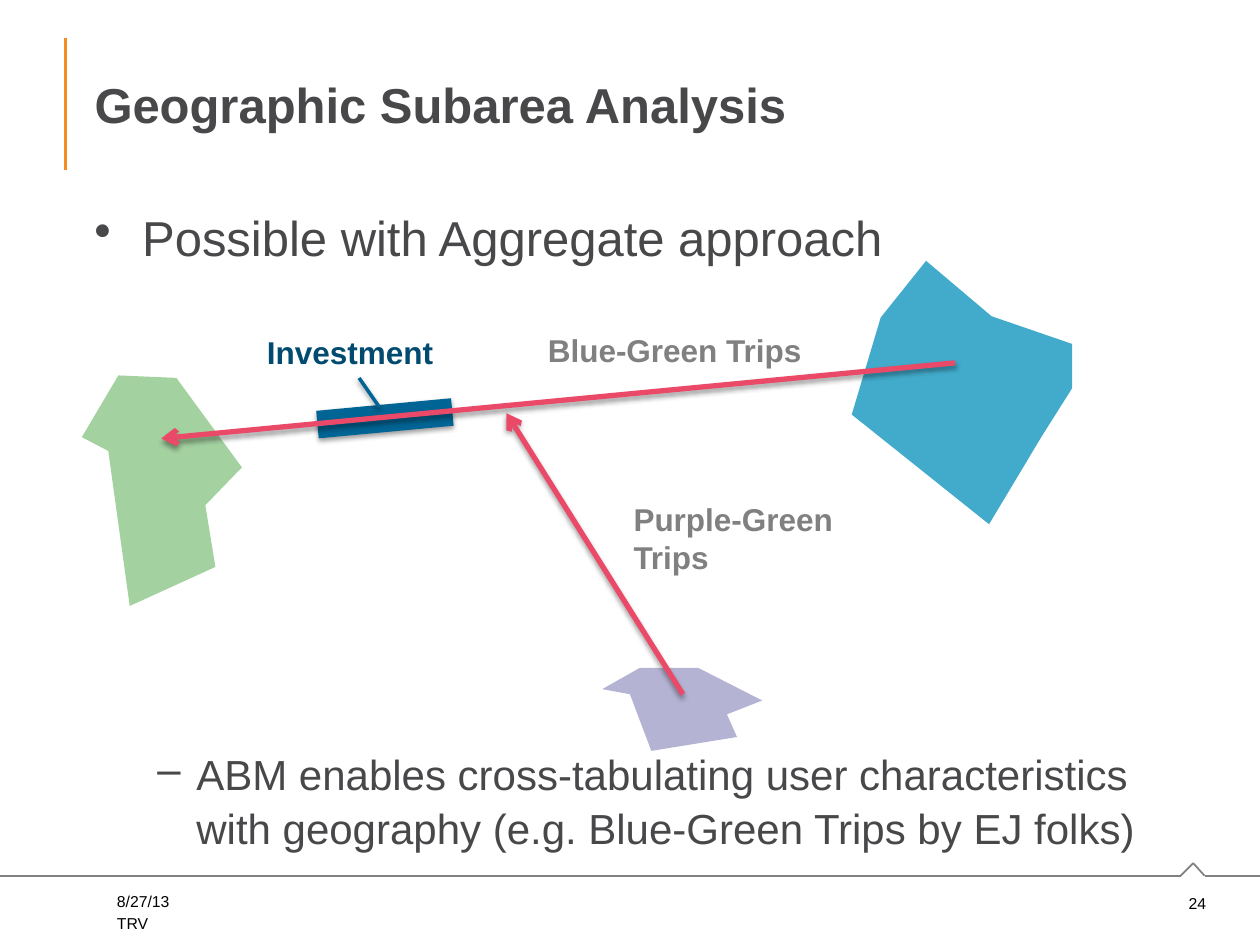
from itertools import pairwise

from lxml import etree
from pptx import Presentation
from pptx.dml.color import RGBColor
from pptx.enum import shapes, text
from pptx.oxml import ns
from pptx.util import Inches, Pt

COLORS = {
    "text": "48484A", "black": "000000", "gray": "808080", "accent": "F68B1F",
    "navy": "004B6F", "road": "006494", "trip": "EA4A67",
    "blue": "42ABCB", "green": "A3D1A0", "purple": "B5B3D3",
}
FONT = "Arial"


def color(name):
    return RGBColor.from_string(COLORS[name])


def add_element(parent, tag, **attributes):
    return etree.SubElement(parent, ns.qn(tag), attributes)


class SlideBuilder:
    def __init__(self, deck):
        self.page = deck.slides.add_slide(deck.slide_layouts[5])
        self.shapes = self.page.shapes

    def style(self, para, size, tint, bold=False):
        para.font.name = FONT
        para.font.size = Pt(size)
        para.font.bold = bold
        para.font.color.rgb = color(tint)

    def title(self, words, left, top, width, height):
        box = self.shapes.title
        box.left, box.top, box.width, box.height = map(Inches, (left, top, width, height))
        box.text_frame.text = words
        box.text_frame.vertical_anchor = text.MSO_ANCHOR.MIDDLE
        para = box.text_frame.paragraphs[0]
        para.alignment = text.PP_ALIGN.LEFT
        self.style(para, 28, "text", bold=True)

    def text_box(self, left, top, width, height):
        box = self.shapes.add_textbox(*map(Inches, (left, top, width, height)))
        box.text_frame.word_wrap = True
        return box.text_frame

    def label(self, words, left, top, width, height, size=18, tint="gray",
              bold=True, align=text.PP_ALIGN.LEFT):
        frame = self.text_box(left, top, width, height)
        frame.text = words
        frame.paragraphs[0].alignment = align
        self.style(frame.paragraphs[0], size, tint, bold)
        return frame

    def bullet(self, para, words, mark, size, margin, hanging):
        para.text = words
        para.line_spacing = 1.06
        properties = para._p.get_or_add_pPr()
        properties.set("marL", str(Inches(margin)))
        properties.set("indent", str(-Inches(hanging)))
        add_element(properties, "a:buChar", char=mark)
        self.style(para, size, "text")

    def line(self, start, end, tint, width, head=None, tail=None, shadow=False):
        line = self.shapes.add_connector(
            shapes.MSO_CONNECTOR.STRAIGHT, *map(Inches, (*start, *end)))
        line.line.color.rgb = color(tint)
        line.line.width = Pt(width)
        outline = line.line._get_or_add_ln()
        for tag, arrow in (("a:headEnd", head), ("a:tailEnd", tail)):
            if arrow:
                add_element(outline, tag, type=arrow)
        effects = add_element(line._element.spPr, "a:effectLst")
        if shadow:
            outer = add_element(effects, "a:outerShdw", blurRad=str(Pt(3.1)),
                                dist=str(Pt(1.6)), dir="5400000", rotWithShape="0")
            shade = add_element(outer, "a:srgbClr", val=COLORS["black"])
            add_element(shade, "a:alpha", val="38000")

    def region(self, points, tint):
        first, *rest = [tuple(map(Inches, point)) for point in points]
        builder = self.shapes.build_freeform(*first)
        builder.add_line_segments(rest, close=True)
        shape = builder.convert_to_shape()
        shape.shadow.inherit = False
        shape.fill.solid()
        shape.fill.fore_color.rgb = color(tint)
        shape.line.fill.background()


def main():
    deck = Presentation()
    deck.slide_width, deck.slide_height = Inches(10), Inches(7.5)
    slide = SlideBuilder(deck)

    # Title and its accent rule
    slide.line((0.52, 0.3), (0.52, 1.35), "accent", 1.5)
    slide.title("Geographic Subarea Analysis", 0.65, 0.3, 8.85, 1.05)

    # Footer rule with a notch above the page number
    footer_rule = [(0, 6.95), (9.37, 6.95), (9.47, 6.85), (9.56, 6.95), (10, 6.95)]
    for start, end in pairwise(footer_rule):
        slide.line(start, end, "gray", 1)
    number = slide.label("24", 9.25, 7.04, 0.42, 0.25, 9, "black", False,
                         text.PP_ALIGN.RIGHT)
    number.vertical_anchor = text.MSO_ANCHOR.MIDDLE
    for words, top in (("8/27/13", 7.03), ("TRV", 7.2)):
        slide.label(words, 0.83, top, 2.27, 0.25, 9, "black", False)

    # Investment segment and purple region
    slide.line((3.59, 3.27), (2.52, 3.37), "road", 15.75, shadow=True)
    slide.region([(4.78, 5.47), (5.08, 5.3), (5.54, 5.3), (6.05, 5.56),
                  (5.77, 5.67), (5.85, 5.85), (5.17, 5.96), (5, 5.51)], "purple")

    # Bullets above and below the diagram
    body = slide.text_box(0.65, 1.57, 8.85, 4.78)
    slide.bullet(body.paragraphs[0], "Possible with Aggregate approach",
                 "•", 28, 0.38, 0.38)
    detail = body.add_paragraph()
    detail.level = 1
    detail.space_before = Pt(274)
    slide.bullet(detail, "ABM enables cross-tabulating user characteristics with "
                 "geography (e.g. Blue-Green Trips by EJ folks)", "–", 24, 0.81, 0.31)

    # Green and blue regions
    slide.region([(0.65, 3.47), (0.94, 2.98), (1.4, 3), (1.92, 3.71),
                  (1.63, 4.01), (1.71, 4.5), (1.03, 4.81), (0.86, 3.58)], "green")
    slide.region([(6.99, 2.52), (7.35, 2.07), (7.87, 2.51), (8.51, 2.73),
                  (8.51, 3.08), (8.27, 3.46), (7.85, 4.16), (6.76, 3.29)], "blue")

    # Trips between regions
    slide.line((1.28, 3.48), (7.58, 2.88), "trip", 3, head="arrow", shadow=True)
    slide.line((5.42, 5.51), (4.02, 3.28), "trip", 3, tail="arrow", shadow=True)

    # Diagram labels
    slide.label("Investment", 2.02, 2.59, 1.65, 0.4, tint="navy")
    slide.label("Purple-Green Trips", 4.93, 3.92, 1.97, 0.71)
    slide.label("Blue-Green Trips", 4.25, 2.58, 2.34, 0.4)
    slide.line((2.85, 3), (3.01, 3.23), "road", 2, shadow=True)

    deck.save("out.pptx")


if __name__ == "__main__":
    main()
